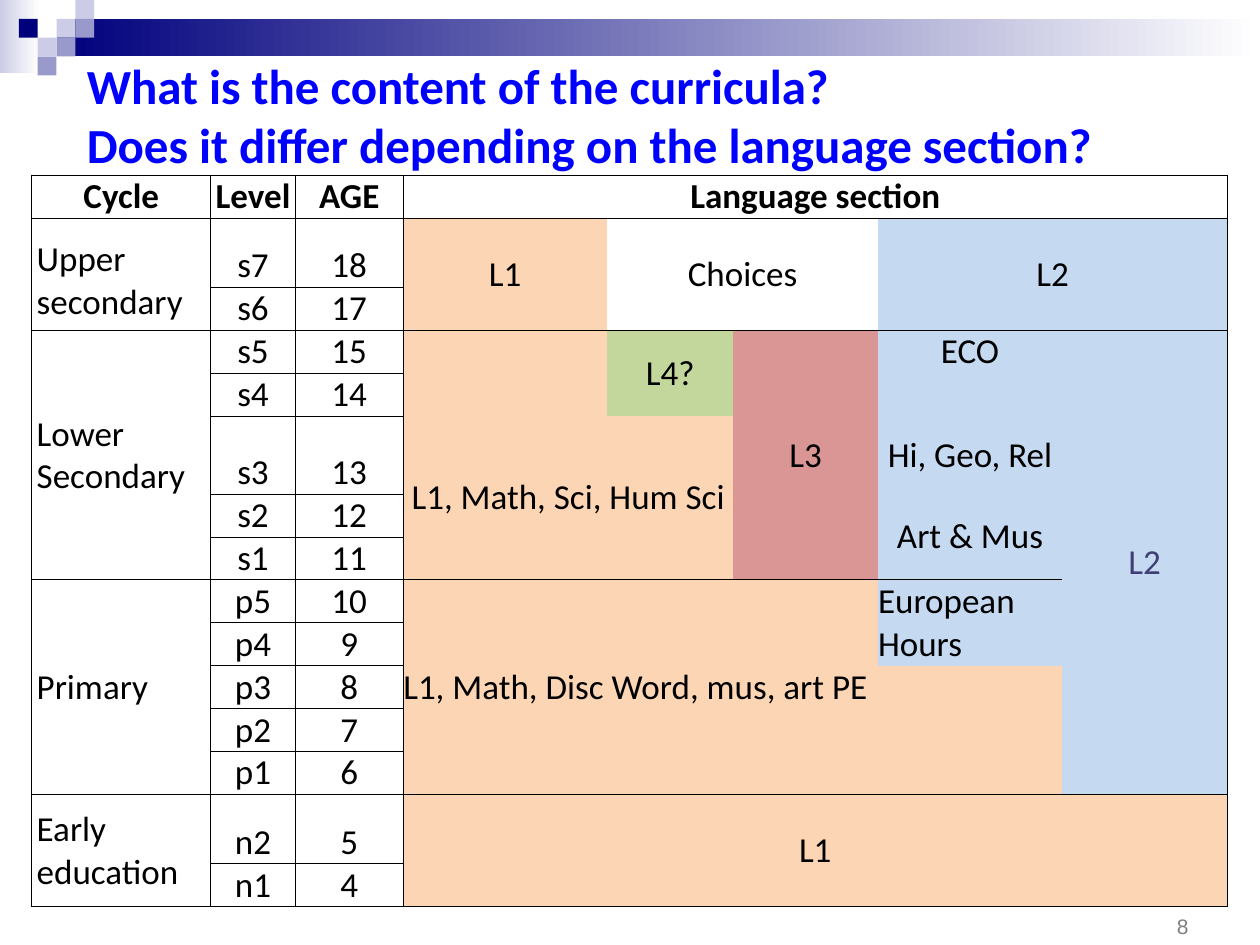
from lxml.etree import SubElement
from pptx import Presentation
from pptx.dml.color import RGBColor
from pptx.enum.shapes import MSO_SHAPE as SHAPE
from pptx.enum.text import MSO_ANCHOR as ANCHOR, MSO_AUTO_SIZE as AUTO, PP_ALIGN as ALIGN
from pptx.oxml.ns import qn
from pptx.util import Cm, Pt

BLACK = RGBColor(0, 0, 0)
WHITE = RGBColor(255, 255, 255)
NAVY = RGBColor(0x00, 0x00, 0x7D)
LILAC = RGBColor(0x99, 0x99, 0xCC)
PALE = RGBColor(0xCC, 0xCC, 0xE6)
TITLE_BLUE = RGBColor(0, 0, 255)
GREY = RGBColor(0x80, 0x80, 0x80)
INDIGO = RGBColor(0x3F, 0x3F, 0x76)
PEACH = RGBColor(0xFC, 0xD5, 0xB5)
BLUE = RGBColor(0xC5, 0xD9, 0xF1)
GREEN = RGBColor(0xC3, 0xD6, 0x9B)
ROSE = RGBColor(0xD9, 0x96, 0x94)

TITLE = ["What is the content of the curricula? ",
         "Does it differ depending on the language section?"]
BANDS = [(0, 0, 0.79, 1.47, PALE), (1.14, 0.38, 24.26, 0.76, NAVY)]
UNIT = 0.38
SQUARES = [(3, 1, PALE), (4, 0, PALE), (4, 1, LILAC), (2, 2, PALE),
           (1, 1, NAVY), (3, 2, LILAC), (2, 3, LILAC)]

HEADERS = ["Cycle", "Level", "AGE", "Language section"]
LEVELS = ["s7", "s6", "s5", "s4", "s3", "s2", "s1",
          "p5", "p4", "p3", "p2", "p1", "n2", "n1"]
AGES = [18, 17, 15, 14, 13, 12, 11, 10, 9, 8, 7, 6, 5, 4]
CYCLES = [("Upper secondary", 1, 2, ANCHOR.BOTTOM), ("Lower Secondary", 3, 5, ANCHOR.MIDDLE),
          ("Primary", 8, 5, ANCHOR.MIDDLE), ("Early education", 13, 2, ANCHOR.MIDDLE)]
# row, column, rows spanned, columns spanned, text, fill
SUBJECTS = [
    (1, 3, 2, 1, "L1", PEACH), (1, 4, 2, 2, "Choices", None), (1, 6, 2, 2, "L2", BLUE),
    (3, 4, 2, 1, "L4?", GREEN), (3, 5, 5, 1, "L3", ROSE), (3, 6, 1, 1, "ECO", BLUE),
    (3, 7, 10, 1, "L2", BLUE), (4, 6, 1, 1, "", BLUE),
    (5, 3, 3, 2, "L1, Math, Sci, Hum Sci", PEACH), (5, 6, 1, 1, "Hi, Geo, Rel", BLUE),
    (6, 6, 2, 1, "Art & Mus", BLUE), (8, 6, 1, 1, "European", BLUE),
    (9, 6, 1, 1, "Hours", BLUE),
    (10, 3, 1, 4, "L1, Math, Disc Word, mus, art PE\u00a0".replace("\u00a0", " "), PEACH),
    (13, 3, 2, 5, "L1", PEACH),
]
LEFT_ALIGNED_ROWS = (8, 9, 10)
COL_WIDTHS = [3.61, 1.7, 2.18, 4.11, 2.54, 2.92, 3.71, 3.33]
ROW_HEIGHT = 0.81
TALL_ROWS = {1: 1.4, 5: 1.57, 13: 1.4}
ROWS, COLS = len(LEVELS) + 1, len(COL_WIDTHS)
CYCLE_EDGES = {0, ROWS} | {start for _, start, _, _ in CYCLES}


def add_run(p, text, size, color, font="Calibri", bold=False):
    r = p.add_run()
    r.text = text
    r.font.size, r.font.name, r.font.bold = Pt(size), font, bold
    r.font.color.rgb = color


def add_rect(s, x, y, w, h, color, fade=False):
    sp = s.shapes.add_shape(SHAPE.RECTANGLE, Cm(x), Cm(y), Cm(w), Cm(h))
    sp.shadow.inherit = False
    sp.line.fill.background()
    if fade:
        sp.fill.gradient()
        sp.fill.gradient_angle = 0
        for stop, c in zip(sp.fill.gradient_stops, (color, WHITE)):
            stop.color.rgb = c
    else:
        sp.fill.solid()
        sp.fill.fore_color.rgb = color


def add_text_box(s, x, y, w, h):
    tf = s.shapes.add_textbox(Cm(x), Cm(y), Cm(w), Cm(h)).text_frame
    tf.word_wrap = True
    return tf


def write(cell, text, align=ALIGN.CENTER, anchor=ANCHOR.BOTTOM, bold=False, color=BLACK):
    cell.vertical_anchor = anchor
    p = cell.text_frame.paragraphs[0]
    p.alignment = align
    if text:
        add_run(p, text, 20, color, bold=bold)


def paint(cell, color):
    if color is None:
        cell.fill.background()
    else:
        cell.fill.solid()
        cell.fill.fore_color.rgb = color


def has_row_line(row, col):
    if col in (1, 2):
        return True
    return row in CYCLE_EDGES and (row, col) != (8, 7)


def has_col_line(col):
    return col <= 3 or col == COLS


def draw_borders(cell, row, col):
    h, w = (cell.span_height, cell.span_width) if cell.is_merge_origin else (1, 1)
    edges = [("a:lnL", has_col_line(col)), ("a:lnR", has_col_line(col + w)),
             ("a:lnT", has_row_line(row, col)), ("a:lnB", has_row_line(row + h, col))]
    tc_pr = cell._tc.get_or_add_tcPr()
    for i, (tag, shown) in enumerate(edges):
        ln = SubElement(tc_pr, qn(tag), w=str(Pt(0.5)))
        if shown:
            SubElement(SubElement(ln, qn("a:solidFill")), qn("a:srgbClr"), val=str(BLACK))
        else:
            SubElement(ln, qn("a:noFill"))
        tc_pr.insert(i, ln)


def add_curriculum(s):
    tbl = s.shapes.add_table(ROWS, COLS, Cm(0.64), Cm(3.53), Cm(24.1), Cm(14.63)).table
    tbl.first_row = tbl.horz_banding = False
    for col, width in enumerate(COL_WIDTHS):
        tbl.columns[col].width = Cm(width)
    for row in range(ROWS):
        tbl.rows[row].height = Cm(TALL_ROWS.get(row, ROW_HEIGHT))
        for col in range(COLS):
            cell = tbl.cell(row, col)
            cell.margin_left = cell.margin_right = cell.margin_top = cell.margin_bottom = 0
            paint(cell, PEACH if row and col > 2 else None)

    for col, text in enumerate(HEADERS):
        write(tbl.cell(0, col), text, bold=True)
    tbl.cell(0, 3).merge(tbl.cell(0, COLS - 1))
    for row, (level, age) in enumerate(zip(LEVELS, AGES), 1):
        write(tbl.cell(row, 1), level)
        write(tbl.cell(row, 2), str(age))
    for text, row, h, anchor in CYCLES:
        cell = tbl.cell(row, 0)
        cell.merge(tbl.cell(row + h - 1, 0))
        cell.margin_left = cell.margin_right = Cm(0.1)
        cell.margin_top, cell.margin_bottom = Cm(0.15), Cm(0.13)
        write(cell, text, ALIGN.LEFT, anchor)
    for row, col, h, w, text, color in SUBJECTS:
        cell = tbl.cell(row, col)
        if h * w > 1:
            cell.merge(tbl.cell(row + h - 1, col + w - 1))
        paint(cell, color)
        left = row in LEFT_ALIGNED_ROWS
        write(cell, text, ALIGN.LEFT if left else ALIGN.CENTER,
              ANCHOR.BOTTOM if left else ANCHOR.MIDDLE,
              color=INDIGO if (row, col) == (3, 7) else BLACK)
    for row in range(ROWS):
        for col in range(COLS):
            draw_borders(tbl.cell(row, col), row, col)


def main():
    prs = Presentation()
    prs.slide_width, prs.slide_height = Cm(25.4), Cm(19.05)
    s = prs.slides.add_slide(prs.slide_layouts[6])
    for band in BANDS:
        add_rect(s, *band, fade=True)
    for col, row, color in SQUARES:
        add_rect(s, col * UNIT, row * UNIT, UNIT, UNIT, color)
    add_curriculum(s)

    tf = add_text_box(s, 1.5, 0.99, 23.5, 2.64)
    tf.auto_size = AUTO.SHAPE_TO_FIT_TEXT
    p = tf.paragraphs[0]
    for i, line in enumerate(TITLE):
        if i:
            p.add_line_break()
        add_run(p, line, 28, TITLE_BLUE, bold=True)

    tf = add_text_box(s, 18.29, 17.78, 5.92, 1.27)
    tf.vertical_anchor = ANCHOR.BOTTOM
    p = tf.paragraphs[0]
    p.alignment = ALIGN.RIGHT
    add_run(p, "8", 12, GREY, font="Arial")
    prs.save("out.pptx")


if __name__ == "__main__":
    main()
